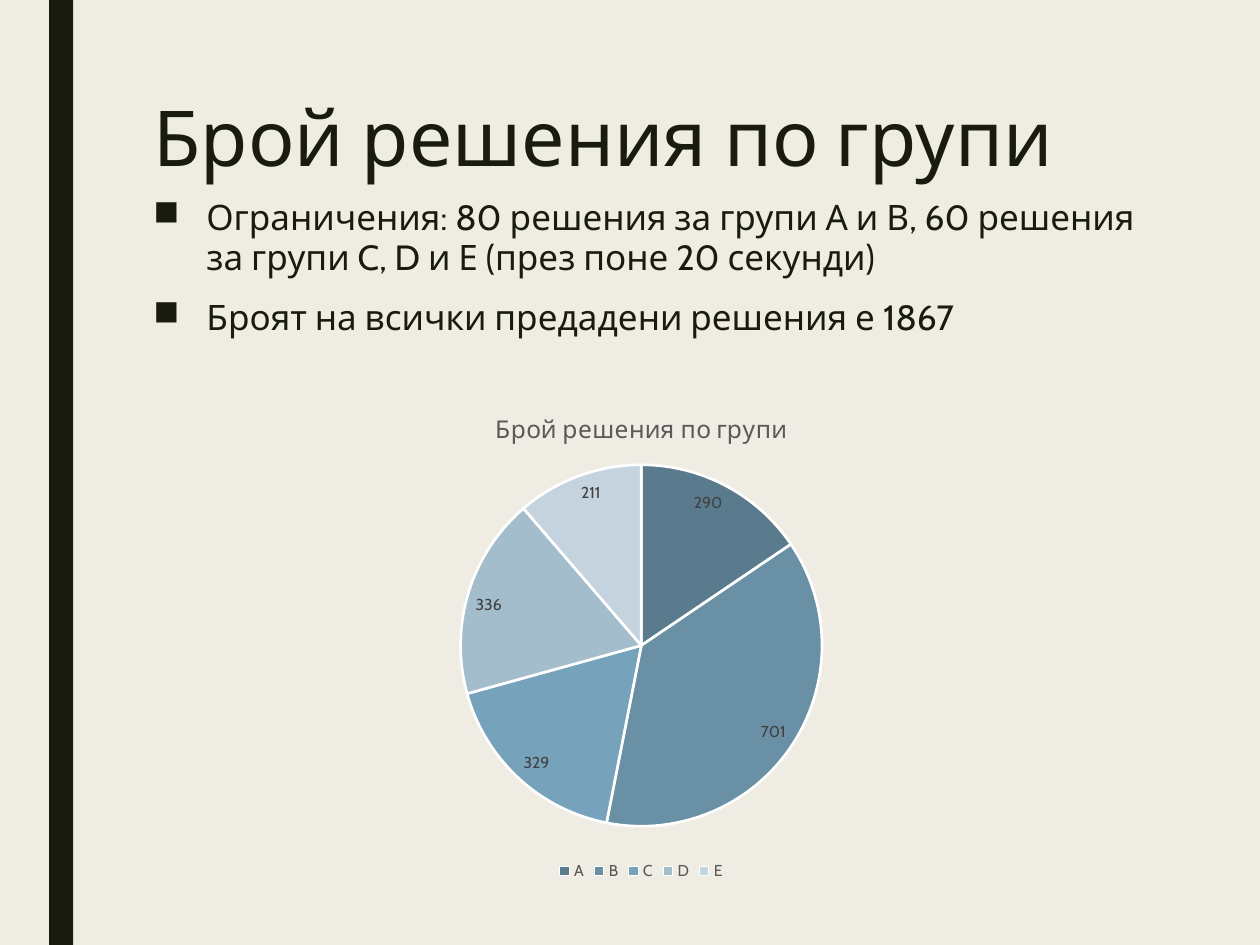
from pptx import Presentation
from pptx.chart.data import CategoryChartData
from pptx.dml.color import RGBColor
from pptx.enum.chart import XL_CHART_TYPE, XL_LABEL_POSITION, XL_LEGEND_POSITION
from pptx.enum.shapes import MSO_SHAPE
from pptx.enum.text import MSO_ANCHOR
from pptx.oxml import parse_xml
from pptx.oxml.ns import nsdecls, qn
from pptx.util import Inches, Pt

PAPER = RGBColor(0xEF, 0xED, 0xE3)
INK = RGBColor(0x19, 0x1B, 0x0E)
GREY = RGBColor(0x59, 0x59, 0x59)
DARK = RGBColor(0x40, 0x40, 0x40)
WHITE = RGBColor(0xFF, 0xFF, 0xFF)
BLUES = [
    RGBColor(0x5A, 0x7B, 0x8E),
    RGBColor(0x6A, 0x90, 0xA6),
    RGBColor(0x77, 0xA2, 0xBB),
    RGBColor(0xA4, 0xBD, 0xCD),
    RGBColor(0xC5, 0xD3, 0xDE),
]
FACE = "Cabin"
TITLE = "Брой решения по групи"
NOTES = [
    "Ограничения: 80 решения за групи А и В, 60 решения за групи C, D и Е (през поне 20 секунди)",
    "Броят на всички предадени решения е 1867",
]
COUNTS = {"A": 290, "B": 701, "C": 329, "D": 336, "E": 211}


class Deck:
    """Slide builder on a grid of 100 columns and 75 rows."""

    def __init__(self):
        self.prs = Presentation()
        self.prs.slide_width, self.prs.slide_height = Inches(10), Inches(7.5)
        self.slide = self.prs.slides.add_slide(self.prs.slide_layouts[6])
        fill = self.slide.background.fill
        fill.solid()
        fill.fore_color.rgb = PAPER

    def place(self, *cells):
        return [round(cell * self.prs.slide_width / 100) for cell in cells]

    def style(self, font, size, color):
        font.name, font.size, font.bold = FACE, Pt(size), False
        font.color.rgb = color

    def bar(self, *cells):
        shape = self.slide.shapes.add_shape(MSO_SHAPE.RECTANGLE, *self.place(*cells))
        shape.shadow.inherit = False
        shape.fill.solid()
        shape.fill.fore_color.rgb = INK
        shape.line.fill.background()

    def text(self, lines, size, space, *cells):
        frame = self.slide.shapes.add_textbox(*self.place(*cells)).text_frame
        frame.word_wrap = True
        frame.vertical_anchor = MSO_ANCHOR.TOP
        frame.text = "\n".join(lines)
        for para in frame.paragraphs:
            para.line_spacing = space
            for run in para.runs:
                self.style(run.font, size, INK)
        return frame

    def bullets(self, lines, *cells):
        for para in self.text(lines, 20, 0.94, *cells).paragraphs:
            para.space_before, para.space_after = Pt(10), Pt(2)
            props = para._p.get_or_add_pPr()
            props.set("marL", str(Inches(0.42)))
            props.set("indent", str(-Inches(0.42)))
            props.append(parse_xml(f'<a:buChar {nsdecls("a")} char="■"/>'))

    def pie(self, title, counts, *cells):
        data = CategoryChartData()
        data.categories = list(counts)
        data.add_series("Series 1", list(counts.values()))
        chart = self.slide.shapes.add_chart(
            XL_CHART_TYPE.PIE, *self.place(*cells), data
        ).chart
        self.style(chart.font, 10, GREY)
        chart.has_title = True
        frame = chart.chart_title.text_frame
        frame.text = title
        self.style(frame.paragraphs[0].runs[0].font, 14, GREY)
        chart.has_legend = True
        chart.legend.position = XL_LEGEND_POSITION.BOTTOM
        chart.legend.include_in_layout = False
        self.style(chart.legend.font, 9, GREY)
        plot = chart.plots[0]
        plot.vary_by_categories = True
        series = plot.series[0]
        for index, color in enumerate(BLUES):
            part = series.points[index].format
            part.fill.solid()
            part.fill.fore_color.rgb = color
            part.line.color.rgb = WHITE
            part.line.width = Pt(1.5)
        labels = series.data_labels
        labels.show_value = True
        labels.position = XL_LABEL_POSITION.INSIDE_END
        self.style(labels.font, 9, DARK)
        self.fit(chart, x=0.31, y=0.15, w=0.38, h=0.73)

    def fit(self, chart, **shares):
        area = chart.element.find(".//" + qn("c:plotArea"))
        for old in area.findall(qn("c:layout")):
            area.remove(old)
        sizes = "".join(f'<c:{key} val="{val}"/>' for key, val in shares.items())
        area.insert(0, parse_xml(
            f'<c:layout {nsdecls("c")}><c:manualLayout><c:layoutTarget val="inner"/>'
            f'<c:xMode val="edge"/><c:yMode val="edge"/>{sizes}'
            "</c:manualLayout></c:layout>"
        ))


def main():
    deck = Deck()
    deck.bar(3.9, 0, 1.9, 75)
    deck.text([TITLE], 44, 0.89, 11.2, 7.5, 78.8, 9.5)
    deck.bullets(NOTES, 11.2, 15.3, 83.3, 19.7)
    deck.pie(TITLE, COUNTS, 13, 31, 75.8, 39.3)
    deck.prs.save("out.pptx")


if __name__ == "__main__":
    main()
